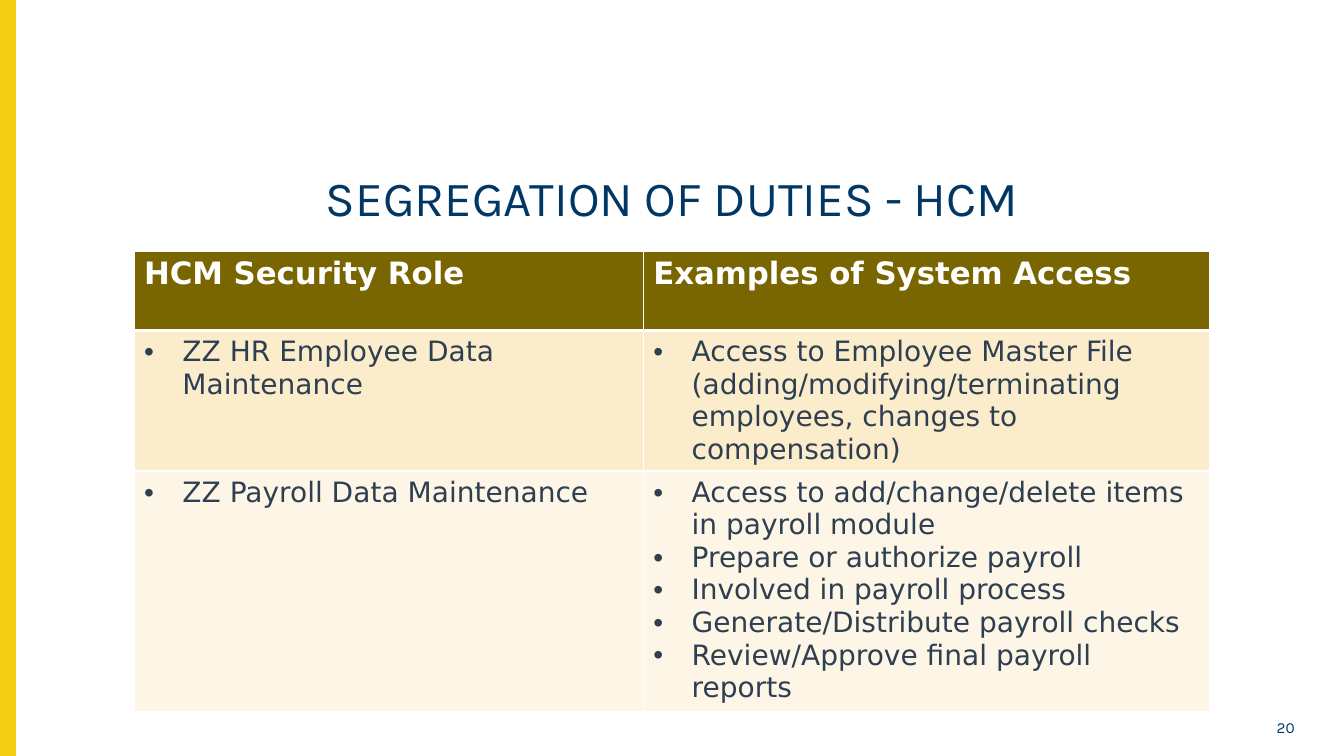
import pptx
import pptx.dml.color
import pptx.enum.shapes
import pptx.enum.text
import pptx.oxml
import pptx.oxml.ns
import pptx.util
from pptx.util import Inches

ALIGN = pptx.enum.text.PP_ALIGN
ANCHOR = pptx.enum.text.MSO_ANCHOR
NS = pptx.oxml.ns.nsdecls("a")

NAVY, SLATE, WHITE, YELLOW = "003764", "2D3F50", "FFFFFF", "F4CE12"
ROW_FILLS = ["7A6600", "FBEDCC", "FDF6E7"]
ROLES = [
    (["HCM Security Role"], ["Examples of System Access"]),
    (["ZZ HR Employee Data Maintenance"],
     ["Access to Employee Master File (adding/modifying/terminating "
      "employees, changes to compensation)"]),
    (["ZZ Payroll Data Maintenance"],
     ["Access to add/change/delete items in payroll module",
      "Prepare or authorize payroll",
      "Involved in payroll process",
      "Generate/Distribute payroll checks",
      "Review/Approve final payroll reports"]),
]


def rgb(value):
    return pptx.dml.color.RGBColor.from_string(value)


def write(p, text, size=20, color=SLATE, font="DejaVu Sans", bold=False,
          align=ALIGN.LEFT, spacing=None, bullet=False):
    """Fill paragraph p with one formatted run."""
    if bullet:
        pPr = p._p.get_or_add_pPr()
        pPr.set("marL", str(Inches(0.38)))
        pPr.set("indent", str(-Inches(0.38)))
        pPr.append(pptx.oxml.parse_xml(f'<a:buFont {NS} typeface="Arial"/>'))
        pPr.append(pptx.oxml.parse_xml(f'<a:buChar {NS} char="•"/>'))
    p.alignment = align
    if spacing:
        p.line_spacing = spacing
    r = p.add_run()
    r.text = text
    r.font.size = pptx.util.Pt(size)
    r.font.name = font
    r.font.bold = bold
    r.font.color.rgb = rgb(color)


def border(cell, side, width):
    """Add a solid white cell border; call before setting the cell's fill."""
    cell._tc.get_or_add_tcPr().append(pptx.oxml.parse_xml(
        f'<a:{side} {NS} w="{pptx.util.Pt(width)}"><a:solidFill>'
        f'<a:srgbClr val="{WHITE}"/></a:solidFill></a:{side}>'))


class Deck:
    def __init__(self):
        self.prs = pptx.Presentation()
        self.prs.slide_width = Inches(13.33)
        self.prs.slide_height = Inches(7.5)
        self.s = self.prs.slides.add_slide(self.prs.slide_layouts[5])

    def bar(self, x, y, w, h, color):
        sp = self.s.shapes.add_shape(
            pptx.enum.shapes.MSO_SHAPE.RECTANGLE,
            Inches(x), Inches(y), Inches(w), Inches(h))
        sp.shadow.inherit = False
        sp.fill.solid()
        sp.fill.fore_color.rgb = rgb(color)
        sp.line.color.rgb = rgb(color)
        sp.line.width = pptx.util.Pt(1)

    def title(self, x, y, w, h, text):
        sp = self.s.shapes.title
        sp.left, sp.top, sp.width, sp.height = map(Inches, (x, y, w, h))
        tf = sp.text_frame
        tf.vertical_anchor = ANCHOR.MIDDLE
        tf.auto_size = pptx.enum.text.MSO_AUTO_SIZE.NONE
        write(tf.paragraphs[0], text, size=35, color=NAVY, font="Karla",
              align=ALIGN.CENTER, spacing=0.9)

    def text(self, x, y, w, h, text, **fmt):
        tf = self.s.shapes.add_textbox(
            Inches(x), Inches(y), Inches(w), Inches(h)).text_frame
        tf.word_wrap = True
        tf.vertical_anchor = ANCHOR.MIDDLE
        write(tf.paragraphs[0], text, **fmt)

    def table(self, x, y, widths, heights, rows):
        """Draw a header row followed by bulleted rows."""
        table = self.s.shapes.add_table(
            len(rows), len(widths), Inches(x), Inches(y),
            Inches(sum(widths)), Inches(sum(heights))).table
        for column, width in zip(table.columns, widths):
            column.width = Inches(width)
        for i, (row, height) in enumerate(zip(table.rows, heights)):
            row.height = Inches(height)
            for cell, lines in zip(row.cells, rows[i]):
                self.cell(cell, lines, i, len(rows))

    def cell(self, cell, lines, i, count):
        header = i == 0
        border(cell, "lnL", 1)
        border(cell, "lnR", 1)
        border(cell, "lnT", 3 if i == 1 else 1)
        border(cell, "lnB", 3 if header and count > 1 else 1)
        cell.fill.solid()
        cell.fill.fore_color.rgb = rgb(ROW_FILLS[i])
        fmt = (dict(size=22, color=WHITE, bold=True) if header
               else dict(bullet=True))
        tf = cell.text_frame
        for n, line in enumerate(lines):
            write(tf.add_paragraph() if n else tf.paragraphs[0], line, **fmt)


def main():
    deck = Deck()
    deck.bar(0, 0, 0.15, 7.5, YELLOW)
    deck.title(0.92, 1.64, 11.5, 0.71, "SEGREGATION OF DUTIES - HCM")
    deck.table(1.33, 2.49, [5.05, 5.62], [0.79, 1.39, 2.39], ROLES)
    deck.text(12.26, 7.09, 0.68, 0.26, "20", size=11, color=NAVY,
              font="Karla", align=ALIGN.RIGHT)
    deck.prs.save("out.pptx")


if __name__ == "__main__":
    main()
